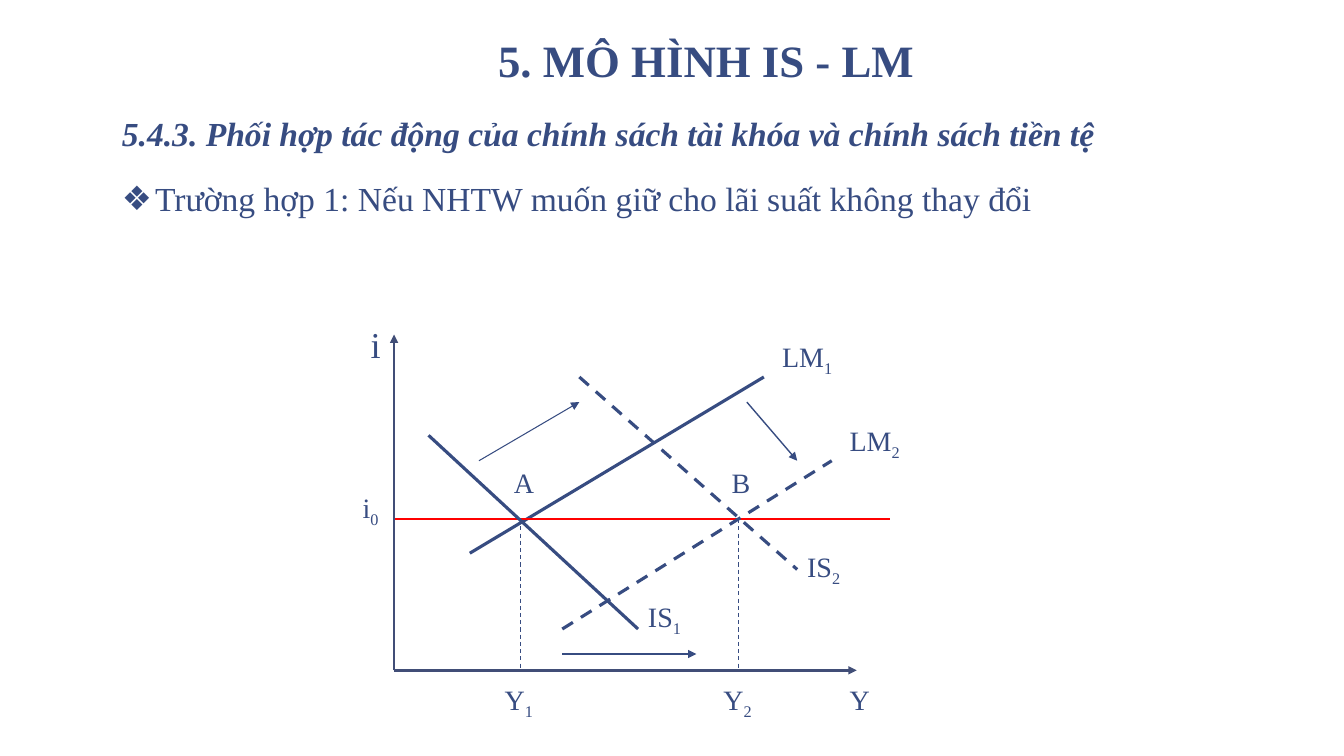
import lxml.etree
import pptx
import pptx.dml.color
import pptx.enum.dml
import pptx.enum.shapes
import pptx.enum.text
import pptx.oxml.ns
import pptx.util

COLOURS = {"text": "374C81", "axis": "414E77", "rate": "FF0000"}
FONT = "Times New Roman"
Cm, Pt = pptx.util.Cm, pptx.util.Pt
qn = pptx.oxml.ns.qn


def rgb(name):
    return pptx.dml.color.RGBColor.from_string(COLOURS[name])


class DiagramSlide:
    def __init__(self, prs):
        self.slide = prs.slides.add_slide(prs.slide_layouts[1])

    def add_run(self, paragraph, text, size, bold=False, italic=False):
        run = paragraph.add_run()
        run.text = text
        run.font.name, run.font.size = FONT, Pt(size)
        run.font.bold, run.font.italic = bold, italic
        run.font.color.rgb = rgb("text")
        return run

    def placeholder(self, index, left, top, width, height, anchor):
        """Move a template placeholder and return its text frame."""
        shape = self.slide.placeholders[index]
        shape.left, shape.top = Cm(left), Cm(top)
        shape.width, shape.height = Cm(width), Cm(height)
        frame = shape.text_frame
        frame.word_wrap = True
        frame.auto_size = pptx.enum.text.MSO_AUTO_SIZE.NONE
        frame.vertical_anchor = anchor
        frame.margin_left = frame.margin_right = Cm(0.33)
        frame.margin_top = frame.margin_bottom = Cm(0.18)
        return frame

    def title(self, text):
        frame = self.placeholder(0, 3.15, -0.18, 29.29, 2.54,
                                 pptx.enum.text.MSO_ANCHOR.BOTTOM)
        paragraph = frame.paragraphs[0]
        paragraph.alignment = pptx.enum.text.PP_ALIGN.CENTER
        paragraph.line_spacing = 0.85
        self.add_run(paragraph, text, 32, bold=True)

    def body(self, heading, case):
        frame = self.placeholder(1, 2.74, 2.74, 26.24, 14.55,
                                 pptx.enum.text.MSO_ANCHOR.TOP)
        for text, bullet, space in ((heading, None, 0), (case, "❖", 18.7)):
            paragraph = frame.add_paragraph() if bullet else frame.paragraphs[0]
            properties = paragraph._p.get_or_add_pPr()
            indent = Cm(0.84) if bullet else 0
            properties.set("marL", str(indent))
            properties.set("indent", str(-indent))
            if bullet:
                lxml.etree.SubElement(properties, qn("a:buChar"), char=bullet)
            else:
                lxml.etree.SubElement(properties, qn("a:buNone"))
            paragraph.alignment = pptx.enum.text.PP_ALIGN.JUSTIFY
            paragraph.line_spacing = 0.95
            paragraph.space_before = Pt(space)
            self.add_run(paragraph, text, 24, bold=not bullet, italic=not bullet)

    def line(self, start, end, weight, colour="text", dashed=False, arrow=False):
        connector = self.slide.shapes.add_connector(
            pptx.enum.shapes.MSO_CONNECTOR.STRAIGHT,
            *(Cm(value) for value in (*start, *end)))
        connector.line.color.rgb = rgb(colour)
        connector.line.width = Pt(weight)
        if dashed:
            connector.line.dash_style = pptx.enum.dml.MSO_LINE.DASH
        if arrow:
            lxml.etree.SubElement(connector.line._get_or_add_ln(),
                                  qn("a:tailEnd"), type="triangle")
        lxml.etree.SubElement(connector._element.spPr, qn("a:effectLst"))

    def label(self, text, subscript, left, top, width, size=20):
        box = self.slide.shapes.add_textbox(
            Cm(left), Cm(top), Cm(width), Cm(size * 0.055))
        frame = box.text_frame
        frame.word_wrap = True
        frame.auto_size = pptx.enum.text.MSO_AUTO_SIZE.SHAPE_TO_FIT_TEXT
        self.add_run(frame.paragraphs[0], text, size)
        if subscript:
            run = self.add_run(frame.paragraphs[0], subscript, size)
            run._r.get_or_add_rPr().set("baseline", "-25000")


def main():
    prs = pptx.Presentation()
    prs.slide_width, prs.slide_height = Cm(33.87), Cm(19.05)
    model = DiagramSlide(prs)
    model.title("5. MÔ HÌNH IS - LM")
    model.body(
        "5.4.3. Phối hợp tác động của chính sách tài khóa và chính sách tiền tệ",
        "Trường hợp 1: Nếu NHTW muốn giữ cho lãi suất không thay đổi")

    origin_x, origin_y = 9.93, 16.89
    rate_y = 13.08
    output_1, output_2 = 13.11, 18.62

    model.line((11.84, 13.94), (19.25, 9.5), 2.25)  # LM1
    model.line((origin_x, rate_y), (22.43, rate_y), 1.5, "rate")
    for output in (output_1, output_2):
        model.line((output, rate_y), (output, origin_y), 0.75, dashed=True)
    model.line((14.6, 9.5), (20.09, 14.35), 2.25, dashed=True)  # IS2
    model.line((10.8, 10.97), (16.08, 15.85), 2.25)  # IS1
    model.line((14.17, 15.85), (20.96, 11.61), 2.25, dashed=True)  # LM2

    shifts = (
        ((12.07, 11.61), (14.6, 10.13), 0.75),
        ((14.17, 16.48), (17.55, 16.48), 0.75),
        ((18.82, 10.13), (20.09, 11.61), 1),
    )
    for start, end, weight in shifts:
        model.line(start, end, weight, arrow=True)
    for axis_end in ((origin_x, 8.43), (21.59, origin_y)):
        model.line((origin_x, origin_y), axis_end, 2, "axis", arrow=True)

    point_y, output_y = 11.61, 17.07
    model.label("i", "", 9.09, 8, 1.07, size=26)
    for label in (
        ("IS", "1", 16.08, 14.99, 2.11),
        ("IS", "2", 20.09, 13.72, 1.7),
        ("LM", "1", 19.46, 8.43, 2.11),
        ("LM", "2", 21.16, 10.54, 2.11),
        ("A", "", 12.7, point_y, 1.27),
        ("B", "", 18.19, point_y, 1.27),
        ("Y", "1", 12.47, output_y, 1.7),
        ("Y", "2", 17.98, output_y, 1.7),
        ("Y", "", 21.16, output_y, 1.27),
        ("i", "0", 8.89, 12.24, 1.47),
    ):
        model.label(*label)

    prs.save("out.pptx")


if __name__ == "__main__":
    main()
